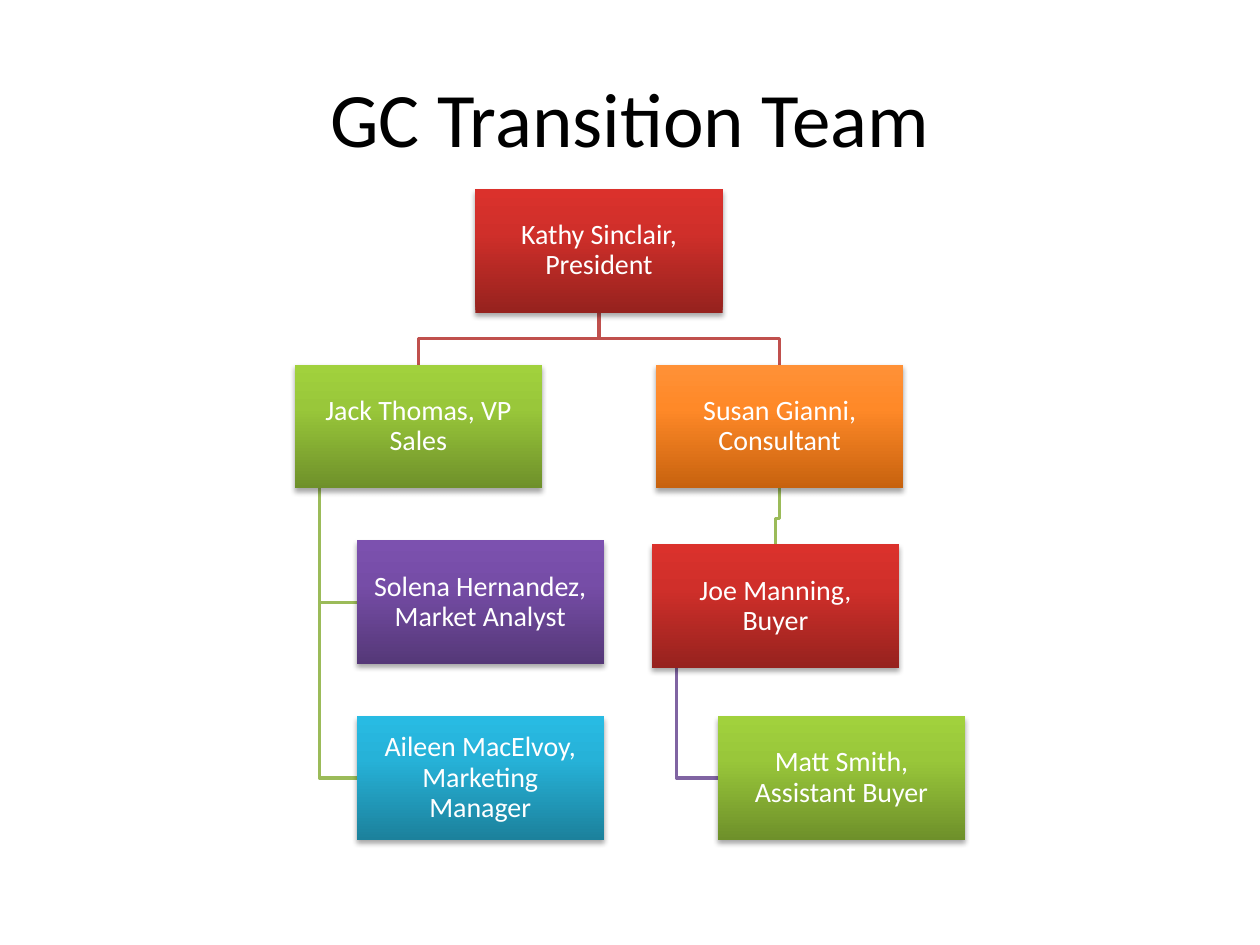
from pptx import Presentation
from pptx.dml.color import RGBColor
from pptx.enum.shapes import MSO_SHAPE as Shape
from pptx.enum.text import MSO_ANCHOR as Anchor, PP_ALIGN as Align
from pptx.oxml import parse_xml
from pptx.oxml.ns import nsdecls
from pptx.util import Pt

TITLE = "GC Transition Team"
RED = ("96221E", "D02F2A", "DB312C")
GREEN = ("6E902A", "99C73A", "A1D13D")
PURPLE = ("553878", "764DA7", "7C51AF")
BLUE = ("1C819C", "26B2D8", "28BBE3")
ORANGE = ("C7620E", "FF8928", "FF9137")

WIDE, HIGH = 141.4, 70.7
GAP = 29.7
STEP = HIGH + GAP
LEFT, TOP = 168.4, 108
PITCH = WIDE * 1.46
INDENT = WIDE / 4
TRUNK = WIDE / 10
NUDGE = (-2.4, 2.3)

STAFF = {
    "Kathy": ("Kathy Sinclair, President", RED, 0.5, 0, 0, (0, 0)),
    "Jack": ("Jack Thomas, VP Sales", GREEN, 0, 1, 0, (0, 0)),
    "Solena": ("Solena Hernandez, Market Analyst", PURPLE, 0, 2, 1, (0, 0)),
    "Aileen": ("Aileen MacElvoy, Marketing Manager", BLUE, 0, 3, 1, (0, 0)),
    "Susan": ("Susan Gianni, Consultant", ORANGE, 1, 1, 0, (0, 0)),
    "Joe": ("Joe Manning, Buyer", RED, 1, 2, 0, NUDGE),
    "Matt": ("Matt Smith, Assistant Buyer", GREEN, 1, 3, 1, (0, 0)),
}
LINKS = [
    ("Joe", "Matt", "8064A2"),
    ("Susan", "Joe", "9BBB59"),
    ("Kathy", "Susan", "C0504D"),
    ("Jack", "Aileen", "9BBB59"),
    ("Jack", "Solena", "9BBB59"),
    ("Kathy", "Jack", "C0504D"),
]
FRAME = dict(word_wrap=True, vertical_anchor=Anchor.MIDDLE)
INSET = dict.fromkeys(
    ("margin_left", "margin_top", "margin_right", "margin_bottom"), Pt(8.6))


def paint(color, code):
    color.rgb = RGBColor.from_string(code)


def apply(target, values):
    for name, value in values.items():
        setattr(target, name, value)


def write(shape, text, size, code, frame, spacing):
    box = shape.text_frame
    box.text = text
    apply(box, frame)
    para = box.paragraphs[0]
    apply(para, dict(alignment=Align.CENTER, line_spacing=spacing))
    font = para.runs[0].font
    apply(font, dict(size=Pt(size), name="Calibri"))
    paint(font.color, code)


def place(name):
    col, row, depth, (dx, dy) = STAFF[name][2:]
    return LEFT + col * PITCH + depth * INDENT + dx, TOP + row * STEP + dy


def route(boss, child):
    (bx, by), (cx, cy) = place(boss), place(child)
    foot = by + HIGH
    if STAFF[child][4]:
        stem, mid = bx + TRUNK, cy + HIGH / 2
        return [(stem, foot), (stem, mid), (cx, mid)]
    start, end, bend = bx + WIDE / 2, cx + WIDE / 2, cy - GAP / 2
    return [(start, foot), (start, bend), (end, bend), (end, cy)]


def link(shapes, boss, child, code):
    first, *rest = [(Pt(x), Pt(y)) for x, y in route(boss, child)]
    pen = shapes.build_freeform(*first)
    pen.add_line_segments(rest, close=False)
    line = pen.convert_to_shape()
    line.shadow.inherit = False
    line.fill.background()
    line.line.width = Pt(2)
    paint(line.line.color, code)


def shade(shape, codes):
    stops = "".join(
        f'<a:gs pos="{pos}000"><a:srgbClr val="{code}"/></a:gs>'
        for pos, code in zip((0, 65, 100), codes))
    props = shape._element.spPr
    props.append(parse_xml(
        f'<a:gradFill {nsdecls("a")} rotWithShape="1"><a:gsLst>{stops}</a:gsLst>'
        '<a:lin ang="16200000" scaled="0"/></a:gradFill>'))
    shape.line.fill.background()
    props.append(parse_xml(
        f'<a:effectLst {nsdecls("a")}><a:outerShdw blurRad="{Pt(3.1)}" '
        f'dist="{Pt(2)}" dir="5400000" rotWithShape="0"><a:srgbClr val="000000">'
        '<a:alpha val="35000"/></a:srgbClr></a:outerShdw></a:effectLst>'))


def card(shapes, name):
    text, codes = STAFF[name][:2]
    area = [Pt(v) for v in (*place(name), WIDE, HIGH)]
    shape = shapes.add_shape(Shape.RECTANGLE, *area)
    shade(shape, codes)
    write(shape, text, 16, "FFFFFF", FRAME | INSET, 0.9)


def main():
    """Build the team chart slide and save it."""
    deck = Presentation()
    apply(deck, dict(slide_width=Pt(720), slide_height=Pt(540)))
    shapes = deck.slides.add_slide(deck.slide_layouts[5]).shapes
    title = shapes.title
    apply(title, dict(left=Pt(36), top=Pt(21.6), width=Pt(648), height=Pt(90)))
    write(title, TITLE, 44, "000000", FRAME, 1.0)
    for row in LINKS:
        link(shapes, *row)
    for name in STAFF:
        card(shapes, name)
    deck.save("out.pptx")


if __name__ == "__main__":
    main()
